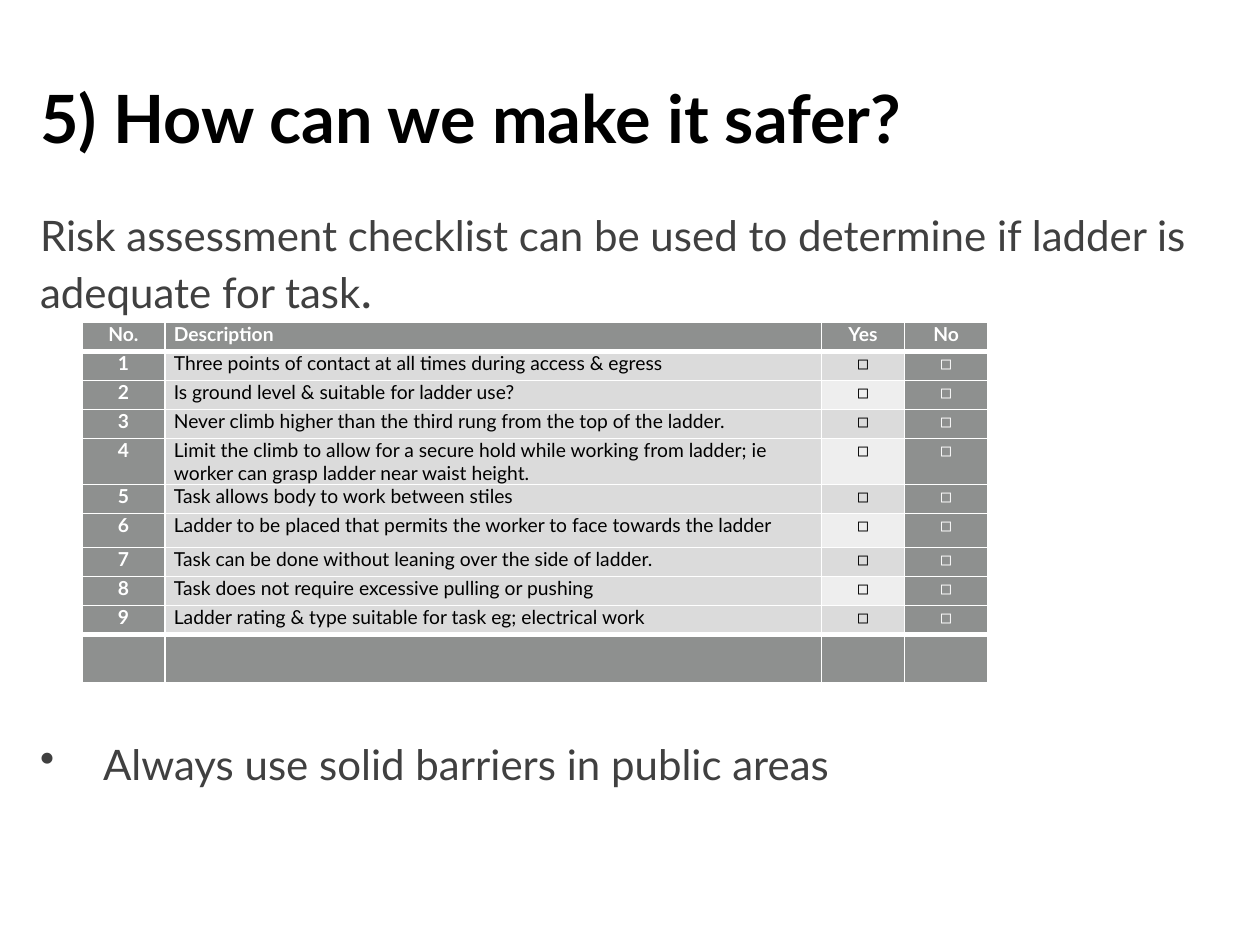
"""Build a slide with a ladder risk assessment checklist."""
import pptx
import pptx.dml.color
import pptx.enum.text
import pptx.oxml
import pptx.oxml.ns
import pptx.util
from pptx.util import Inches

RGBColor = pptx.dml.color.RGBColor
PP_ALIGN = pptx.enum.text.PP_ALIGN
BLACK = RGBColor(0x00, 0x00, 0x00)
WHITE = RGBColor(0xFF, 0xFF, 0xFF)
CHARCOAL = RGBColor(0x40, 0x40, 0x40)
GRAY = RGBColor(0x8E, 0x90, 0x8F)
LIGHT = RGBColor(0xDB, 0xDB, 0xDB)
PALE = RGBColor(0xEE, 0xEE, 0xEE)
CHECKS = [
    "Three points of contact at all times during access & egress",
    "Is ground level & suitable for ladder use?",
    "Never climb higher than the third rung from the top of the ladder.",
    "Limit the climb to allow for a secure hold while working from ladder; "
    "ie worker can grasp ladder near waist height.",
    "Task allows body to work between stiles",
    "Ladder to be placed that permits the worker to face towards the ladder",
    "Task can be done without leaning over the side of ladder.",
    "Task does not require excessive pulling or pushing",
    "Ladder rating & type suitable for task eg; electrical work",
]


def set_font(paragraph, size, color, bold=False):
    paragraph.font.name = "Lato"
    paragraph.font.size = pptx.util.Pt(size)
    paragraph.font.bold = bold
    paragraph.font.color.rgb = color


def add_border(cell, side, points):
    cell._tc.get_or_add_tcPr().append(pptx.oxml.parse_xml(
        f'<a:ln{side} {pptx.oxml.ns.nsdecls("a")} w="{pptx.util.Pt(points)}">'
        f'<a:solidFill><a:srgbClr val="{WHITE}"/></a:solidFill></a:ln{side}>'))


presentation = pptx.Presentation()
presentation.slide_width = Inches(10)
presentation.slide_height = Inches(7.5)
slide = presentation.slides.add_slide(presentation.slide_layouts[5])

title = slide.shapes.title
title.left, title.top = Inches(0.22), Inches(0.3)
title.width, title.height = Inches(9.56), Inches(1.25)
title.text_frame.text = "5) How can we make it safer?"
title.text_frame.vertical_anchor = pptx.enum.text.MSO_ANCHOR.MIDDLE
heading = title.text_frame.paragraphs[0]
heading.alignment = PP_ALIGN.LEFT
set_font(heading, 38, BLACK, True)

body = slide.shapes.add_textbox(Inches(0.22), Inches(1.61), Inches(9.56), Inches(4.58)).text_frame
body.word_wrap = True
intro = body.paragraphs[0]
intro.add_run().text = "Risk assessment checklist can be used to determine if ladder is adequate for task"
full_stop = intro.add_run()
full_stop.text = "."
full_stop.font.size = pptx.util.Pt(28)
set_font(intro, 24, CHARCOAL)

barriers = body.add_paragraph()
barriers.text = "Always use solid barriers in public areas"
barriers.space_before = pptx.util.Pt(240)
barrier_properties = barriers._p.get_or_add_pPr()
barrier_properties.set("marL", str(Inches(0.5)))
barrier_properties.set("indent", str(Inches(-0.5)))
barrier_properties.append(pptx.oxml.parse_xml(
    f'<a:buChar {pptx.oxml.ns.nsdecls("a")} char="•"/>'))
set_font(barriers, 24, CHARCOAL)

rows = [("No.", "Description", "Yes", "No")]
rows += [(str(number), check, "◻", "◻") for number, check in enumerate(CHECKS, 1)]
rows.append(("", "", "", ""))
last = len(rows) - 1
column_widths = [0.66, 5.21, 0.66, 0.66]
row_heights = {4: 0.34, 6: 0.27, last: 0.38}

checklist = slide.shapes.add_table(
    len(rows), len(column_widths), Inches(0.65), Inches(2.56), Inches(7.2), Inches(2.89)).table
for column, width in zip(checklist.columns, column_widths):
    column.width = Inches(width)

for r, texts in enumerate(rows):
    checklist.rows[r].height = Inches(row_heights.get(r, 0.23))
    for c, text in enumerate(texts):
        cell = checklist.cell(r, c)
        cell.margin_left = cell.margin_right = Inches(0.07)
        cell.margin_top = cell.margin_bottom = 0
        dark = r in (0, last) or c in (0, 3)
        add_border(cell, "L", 1)
        add_border(cell, "R", 1)
        add_border(cell, "T", 3 if r in (1, last) else 1)
        add_border(cell, "B", 3 if r in (0, last - 1) else 1)
        cell.fill.solid()
        cell.fill.fore_color.rgb = GRAY if dark else PALE if c == 2 and r % 2 == 0 else LIGHT
        cell.text = text
        entry = cell.text_frame.paragraphs[0]
        entry.alignment = PP_ALIGN.LEFT if c == 1 else PP_ALIGN.CENTER
        entry.space_after = pptx.util.Pt(6 if r == 0 else 3)
        set_font(entry, 11, WHITE if dark else BLACK, dark)

presentation.save("out.pptx")
